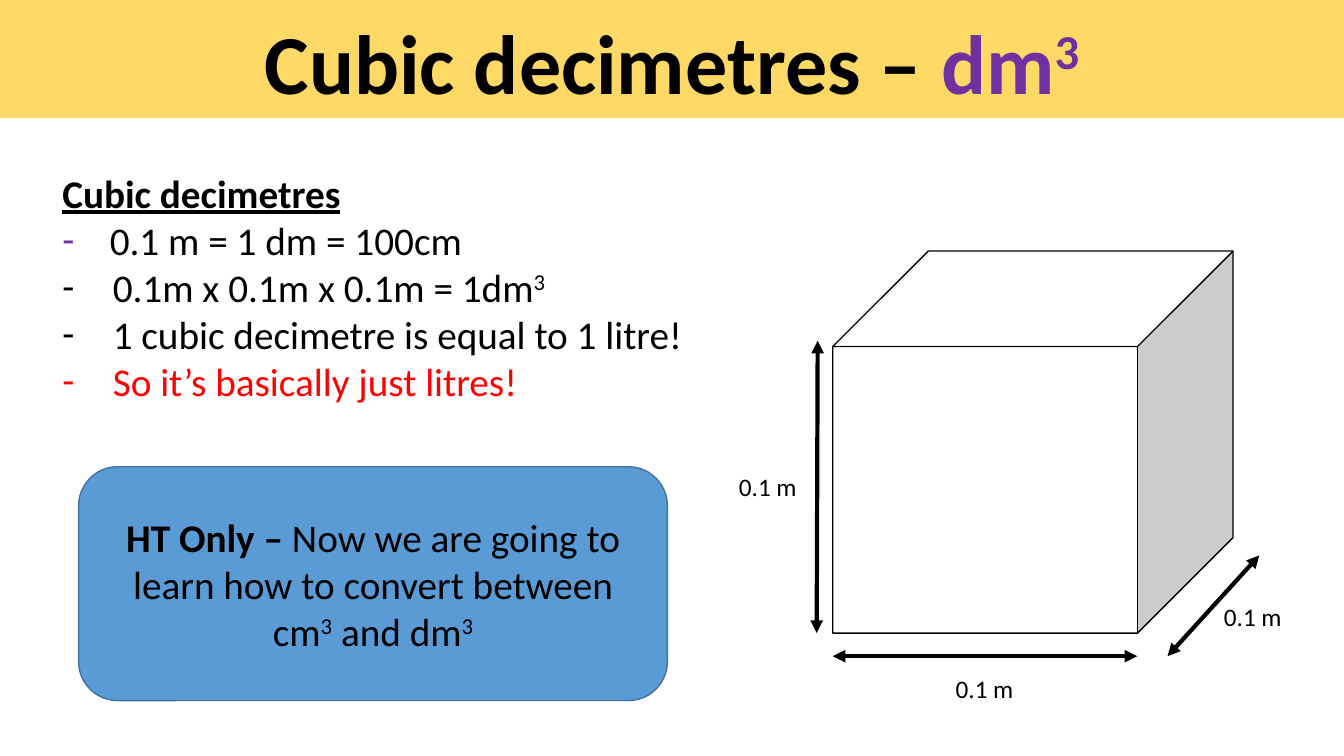
"""Build the cubic decimetres slide with its labelled cube."""
from lxml import etree
from pptx import Presentation
from pptx.dml.color import RGBColor
from pptx.enum.shapes import MSO_CONNECTOR, MSO_SHAPE
from pptx.enum.text import MSO_ANCHOR, MSO_AUTO_SIZE, PP_ALIGN
from pptx.oxml.ns import qn
from pptx.util import Pt

PX = 9144
CUBE, ROUNDED = MSO_SHAPE.CUBE, MSO_SHAPE.ROUNDED_RECTANGLE
STRAIGHT = MSO_CONNECTOR.STRAIGHT
CENTER = PP_ALIGN.CENTER
TOP, MIDDLE, BOTTOM = MSO_ANCHOR.TOP, MSO_ANCHOR.MIDDLE, MSO_ANCHOR.BOTTOM
NO_FIT, GROW = MSO_AUTO_SIZE.NONE, MSO_AUTO_SIZE.SHAPE_TO_FIT_TEXT
COLORS = {
    "black": "000000", "white": "FFFFFF", "banner": "FFD966", "purple": "7030A0",
    "red": "FF0000", "blue": "5B9BD5", "outline": "43739E",
}


def rgb(name):
    return RGBColor.from_string(COLORS[name])


def add_runs(p, runs, size):
    for text, fmt in runs:
        r = p.add_run()
        r.text = text
        fmt = {"name": "Calibri", "size": Pt(size), "bold": False} | fmt
        r.font.color.rgb = rgb(fmt.pop("color", "black"))
        if fmt.pop("superscript", False):
            r._r.get_or_add_rPr().set("baseline", "30000")
        for key, value in fmt.items():
            setattr(r.font, key, value)


prs = Presentation()
prs.slide_width, prs.slide_height = 1333 * PX, 750 * PX
s = prs.slides.add_slide(prs.slide_layouts[5])
cubed = ("3", {"superscript": True})

title = s.shapes.title
for key, value in {"left": 0, "top": 0, "width": 1333, "height": 117}.items():
    setattr(title, key, value * PX)
title.fill.solid()
title.fill.fore_color.rgb = rgb("banner")
tf = title.text_frame
for key, value in {"vertical_anchor": BOTTOM, "auto_size": NO_FIT, "word_wrap": True}.items():
    setattr(tf, key, value)
p = tf.paragraphs[0]
p.alignment, p.line_spacing = CENTER, 0.9
purple_bold = {"bold": True, "color": "purple"}
add_runs(p, [("Cubic decimetres – ", {"bold": True}), ("dm", purple_bold),
             ("3", purple_bold | {"superscript": True})], 60)

solids = {}
for kind, box, fill, line in [
    (CUBE, (826, 249, 397, 379), "white", "black"),
    (ROUNDED, (78, 463, 584, 232), "blue", "outline"),
]:
    sp = s.shapes.add_shape(kind, *[v * PX for v in box])
    sp.shadow.inherit = False
    sp.fill.solid()
    sp.fill.fore_color.rgb = rgb(fill)
    sp.line.color.rgb = rgb(line)
    sp.line.width = Pt(1)
    solids[kind] = sp

tf = solids[ROUNDED].text_frame
tf.word_wrap, tf.vertical_anchor = True, MIDDLE
p = tf.paragraphs[0]
p.alignment = CENTER
add_runs(p, [("HT Only – ", {"bold": True}),
             ("Now we are going to learn how to convert between cm", {}), cubed,
             (" and dm", {}), cubed], 28)

notes = [
    (0, "black", [("Cubic decimetres", {"bold": True, "underline": True})]),
    (47, "purple", [("0.1 m = 1 dm = 100cm", {})]),
    (50, "black", [("0.1m x 0.1m x 0.1m = 1dm", {}), cubed]),
    (50, "black", [("1 cubic decimetre is equal to 1 litre!", {})]),
    (50, "red", [("So it’s basically just litres!", {"color": "red"})]),
]
labels = [(723, 463), (938, 663), (1204, 592)]
texts = [((52, 163, 642, 276), 28, notes)]
texts += [((x, y, 78, 40), 18, [(0, "black", [("0.1 m", {})])]) for x, y in labels]
for box, size, paragraphs in texts:
    tf = s.shapes.add_textbox(*[v * PX for v in box]).text_frame
    tf.word_wrap, tf.auto_size, tf.vertical_anchor = False, GROW, TOP
    for i, (indent, color, runs) in enumerate(paragraphs):
        p = tf.add_paragraph() if i else tf.paragraphs[0]
        add_runs(p, runs, size)
        if indent:
            pPr = p._p.get_or_add_pPr()
            pPr.set("marL", str(indent * PX))
            pPr.set("indent", str(-indent * PX))
            buClr = etree.SubElement(pPr, qn("a:buClr"))
            etree.SubElement(buClr, qn("a:srgbClr"), val=COLORS[color])
            etree.SubElement(pPr, qn("a:buFont"), typeface="Calibri")
            etree.SubElement(pPr, qn("a:buChar"), char="-")

for ends in [(826, 651, 1128, 651), (1158, 651, 1249, 551), (810, 628, 811, 338)]:
    arrow = s.shapes.add_connector(STRAIGHT, *[v * PX for v in ends])
    arrow.line.color.rgb = rgb("black")
    arrow.line.width = Pt(3)
    for tag in ("a:headEnd", "a:tailEnd"):
        etree.SubElement(arrow.line._get_or_add_ln(), qn(tag), type="triangle")
    etree.SubElement(arrow._element.spPr, qn("a:effectLst"))

prs.save("out.pptx")
